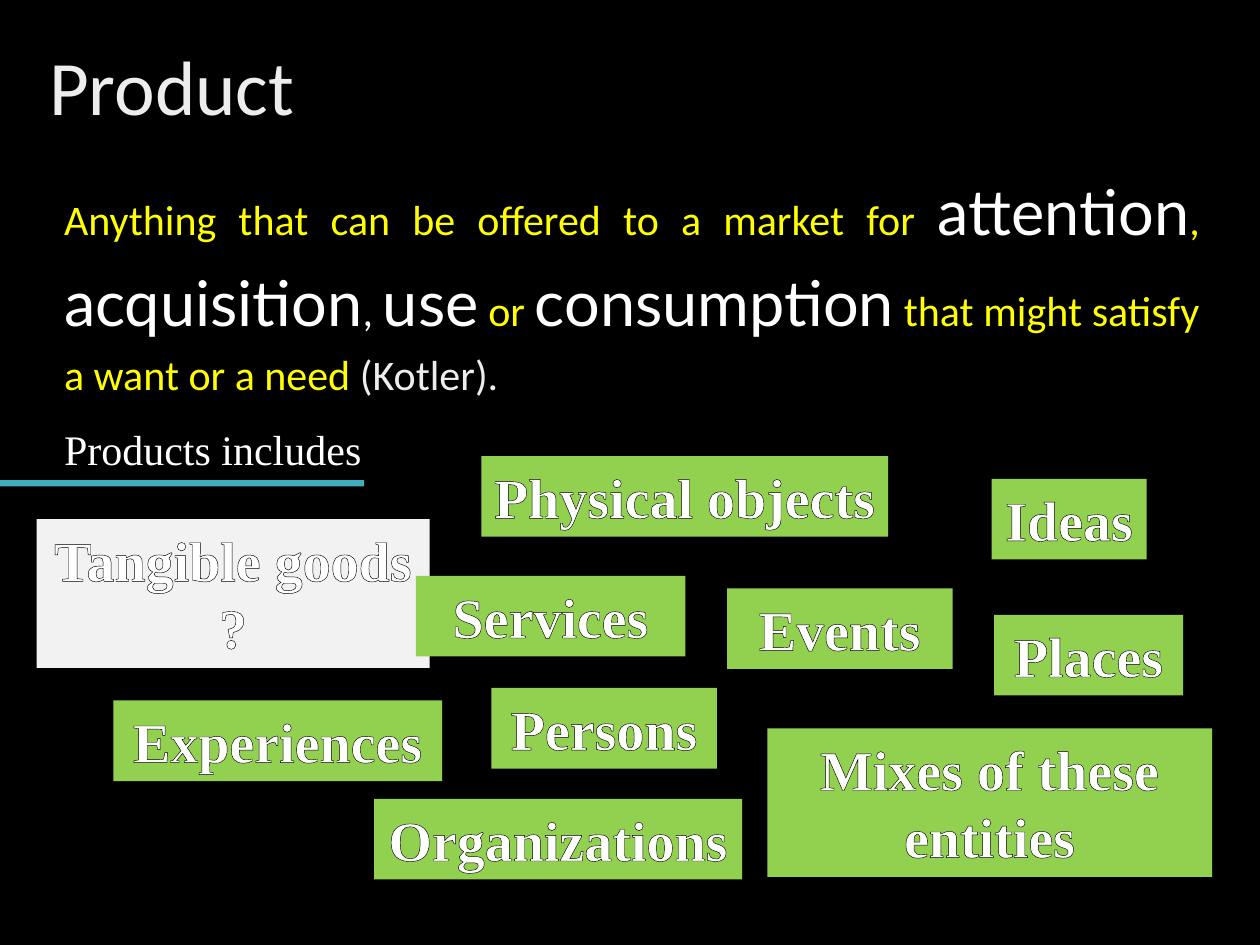
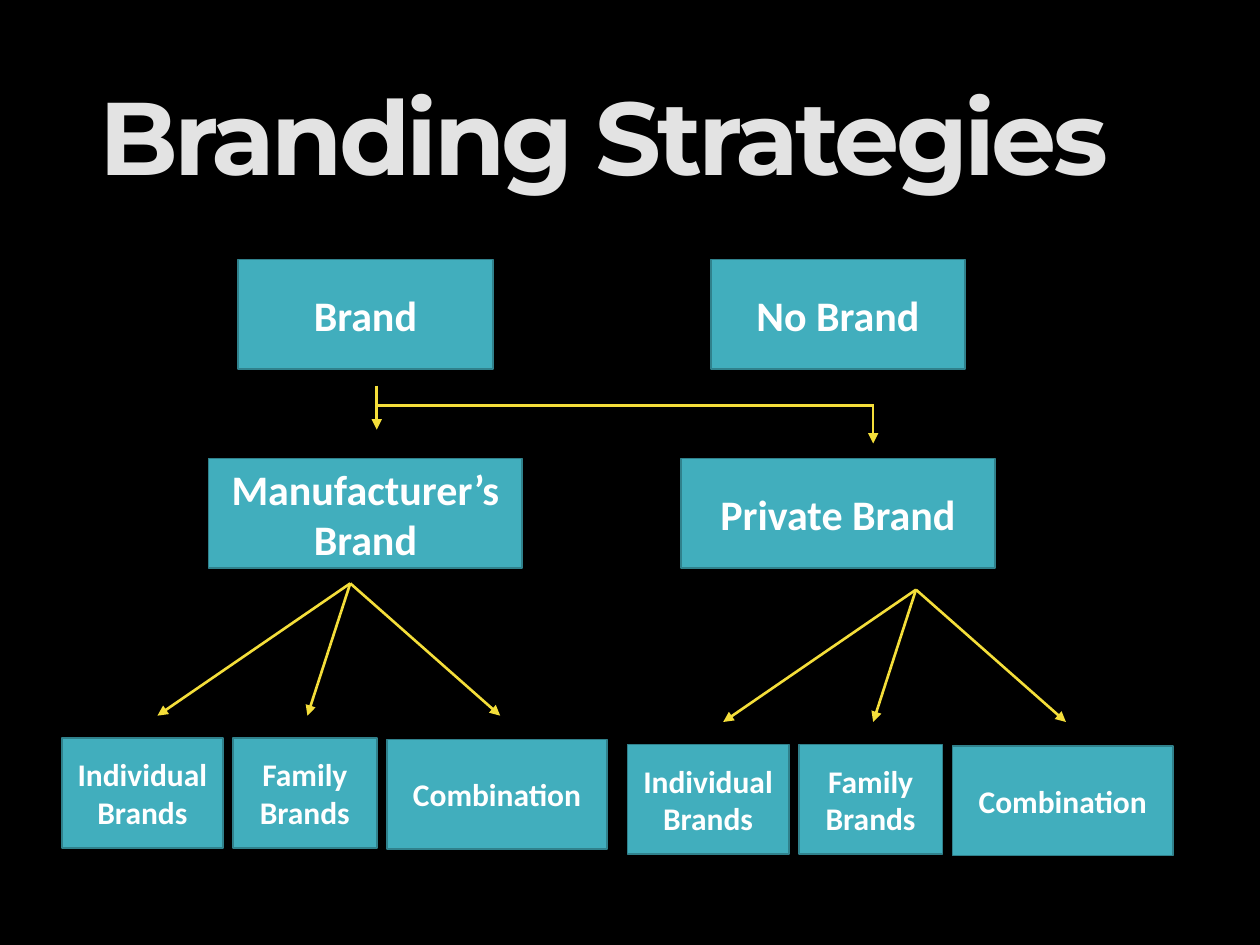
from dataclasses import dataclass

import lxml.etree
import pptx
import pptx.dml.color
import pptx.enum.shapes
import pptx.enum.text
import pptx.oxml.ns
import pptx.util

Inches = pptx.util.Inches
Pt = pptx.util.Pt
ALIGN = pptx.enum.text.PP_ALIGN
ANCHOR = pptx.enum.text.MSO_ANCHOR
AUTO_SIZE = pptx.enum.text.MSO_AUTO_SIZE
TITLE_ONLY = 5


@dataclass(frozen=True)
class Theme:
    background: str = "000000"
    white: str = "FFFFFF"
    silver: str = "EDEDED"
    title_gray: str = "E3E3E3"
    yellow: str = "FFFF00"
    teal: str = "41AEBD"
    teal_edge: str = "30818C"
    green: str = "92D050"
    pale: str = "F2F2F2"
    arrow: str = "F4DE3A"
    sans: str = "Calibri"
    accent_sans: str = "Lato"
    display: str = "Montserrat"
    serif: str = "Times New Roman"
    title_size: int = 44
    display_size: int = 59
    emphasis_size: int = 36
    tag_size: int = 32
    body_size: int = 24
    small_size: int = 18


THEME = Theme()


def rgb(value):
    return pptx.dml.color.RGBColor.from_string(value)


def add_element(parent, tag, **attributes):
    return lxml.etree.SubElement(parent, pptx.oxml.ns.qn(tag), **attributes)


class Deck:
    """Holds the theme and the slide being built."""

    def __init__(self, theme):
        self.theme = theme
        self.presentation = pptx.Presentation()
        self.presentation.slide_width = Inches(10)
        self.presentation.slide_height = Inches(7.5)
        fill = self.presentation.slide_master.background.fill
        fill.solid()
        fill.fore_color.rgb = rgb(theme.background)
        self.slide = None

    def add_run(self, paragraph, text, color, **formats):
        run = paragraph.add_run()
        run.text = text
        run.font.color.rgb = rgb(color)
        for name, value in formats.items():
            setattr(run.font, name, value)
        return run

    def format_frame(self, shape, **formats):
        for name, value in formats.items():
            setattr(shape.text_frame, name, value)
        return shape.text_frame.paragraphs[0]

    def start_slide(self, title, box, color, letter_spacing=0, **formats):
        layout = self.presentation.slide_layouts[TITLE_ONLY]
        self.slide = self.presentation.slides.add_slide(layout)
        placeholder = self.slide.shapes.title
        for name, value in zip(("left", "top", "width", "height"), box):
            setattr(placeholder, name, Inches(value))
        paragraph = self.format_frame(
            placeholder, auto_size=AUTO_SIZE.NONE,
            vertical_anchor=ANCHOR.MIDDLE, word_wrap=True)
        paragraph.alignment = ALIGN.LEFT
        paragraph.line_spacing = 0.9
        run = self.add_run(paragraph, title, color, **formats)
        if letter_spacing:
            properties = run._r.get_or_add_rPr()
            properties.set("spc", str(round(letter_spacing * 100)))

    def text_box(self, box, **formats):
        shape = self.slide.shapes.add_textbox(*map(Inches, box))
        return self.format_frame(shape, **formats)

    def rectangle(self, box, fill, edge=None):
        shape = self.slide.shapes.add_shape(
            pptx.enum.shapes.MSO_SHAPE.RECTANGLE, *map(Inches, box))
        shape.shadow.inherit = False
        shape.fill.solid()
        shape.fill.fore_color.rgb = rgb(fill)
        if edge:
            shape.line.color.rgb = rgb(edge)
            shape.line.width = Pt(1)
        else:
            shape.line.fill.background()
        return shape

    def tag(self, text, box, fill):
        """Flat label with large outlined letters."""
        shape = self.rectangle(box, fill)
        paragraph = self.format_frame(
            shape, word_wrap=True, vertical_anchor=ANCHOR.TOP,
            auto_size=AUTO_SIZE.SHAPE_TO_FIT_TEXT)
        paragraph.alignment = ALIGN.CENTER
        run = self.add_run(
            paragraph, text, self.theme.white, name=self.theme.serif,
            size=Pt(self.theme.tag_size), bold=True)
        properties = run._r.get_or_add_rPr()
        outline = add_element(properties, "a:ln", w=str(Pt(0.75)))
        solid = add_element(outline, "a:solidFill")
        add_element(solid, "a:srgbClr", val=self.theme.background)
        properties.insert(0, outline)

    def node(self, text, box, size):
        """Box of the strategy tree."""
        shape = self.rectangle(box, self.theme.teal, self.theme.teal_edge)
        paragraph = self.format_frame(
            shape, word_wrap=True, vertical_anchor=ANCHOR.MIDDLE)
        paragraph.alignment = ALIGN.CENTER
        self.add_run(paragraph, text, self.theme.white,
                     name=self.theme.sans, size=Pt(size), bold=True)

    def line(self, start, end, arrow=True):
        connector = self.slide.shapes.add_connector(
            pptx.enum.shapes.MSO_CONNECTOR.STRAIGHT,
            *map(Inches, (*start, *end)))
        connector.line.color.rgb = rgb(self.theme.arrow)
        connector.line.width = Pt(1.5)
        if arrow:
            add_element(connector.line._get_or_add_ln(), "a:tailEnd",
                        type="triangle")
        add_element(connector._element.spPr, "a:effectLst")


def build_product(deck):
    theme = deck.theme
    deck.start_slide("Product", (0.29, 0.24, 8.62, 0.95), theme.silver,
                     name=theme.sans, size=Pt(theme.title_size))

    plain = {"name": theme.sans, "size": Pt(theme.body_size)}
    emphasis = {"name": theme.accent_sans, "size": Pt(theme.emphasis_size)}
    definition = deck.text_box((0.41, 1.2, 9.21, 2.11), word_wrap=True)
    definition.alignment = ALIGN.JUSTIFY
    definition.line_spacing = 1.2
    for text, color, formats in (
            ("Anything that can be offered to a market for ",
             theme.yellow, plain),
            ("attention", theme.white, emphasis),
            (", ", theme.yellow, plain),
            ("acquisition", theme.white, emphasis),
            (", ", theme.white, plain),
            ("use", theme.white, emphasis),
            (" ", theme.white, plain),
            ("or ", theme.yellow, plain),
            ("consumption", theme.white, emphasis),
            (" that might satisfy a want or a need ", theme.yellow, plain),
            ("(Kotler).", theme.silver, plain)):
        deck.add_run(definition, text, color, **formats)

    heading = deck.text_box((0.41, 3.31, 2.58, 0.5), word_wrap=False,
                            auto_size=AUTO_SIZE.SHAPE_TO_FIT_TEXT)
    deck.add_run(heading, "Products includes", theme.white,
                 name=theme.serif, size=Pt(theme.body_size))
    deck.rectangle((0, 3.81, 2.89, 0.05), theme.teal)

    one_line, two_lines = 0.64, 1.18
    deck.tag("Tangible goods ?", (0.29, 4.12, 3.12, two_lines), theme.pale)
    for text, left, top, width, height in (
            ("Physical objects", 3.82, 3.62, 3.23, one_line),
            ("Services", 3.3, 4.57, 2.14, one_line),
            ("Persons", 3.9, 5.46, 1.79, one_line),
            ("Places", 7.89, 4.88, 1.5, one_line),
            ("Organizations", 2.97, 6.34, 2.92, one_line),
            ("Ideas", 7.87, 3.8, 1.23, one_line),
            ("Mixes of these entities", 6.09, 5.78, 3.53, two_lines),
            ("Events", 5.77, 4.67, 1.79, one_line),
            ("Experiences", 0.9, 5.56, 2.61, one_line)):
        deck.tag(text, (left, top, width, height), theme.green)


def add_brand_options(deck, left, top, node_height):
    """Three options fanned out from one point above them."""
    apex = (left + 2.29, top - 1.23)
    for text, offset, drop, width, tip in (
            ("Individual Brands", 0, 0, 1.28, 0.76),
            ("Family Brands", 1.36, 0, 1.14, 1.95),
            ("Combination", 2.58, 0.01, 1.75, 3.48)):
        deck.node(text, (left + offset, top + drop, width, node_height),
                  deck.theme.small_size)
        deck.line(apex, (left + tip, top - 0.18))


def build_branding(deck):
    theme = deck.theme
    deck.start_slide("Branding Strategies", (0.69, 0.4, 8.62, 1.45),
                     theme.title_gray, letter_spacing=-2.2,
                     name=theme.display, size=Pt(theme.display_size),
                     bold=True)

    node_height = 0.87
    column_centers = (2.9, 6.65)
    for labels, top, width in (
            (("Brand", "No Brand"), 2.06, 2.02),
            (("Manufacturer’s Brand", "Private Brand"), 3.64, 2.49)):
        for text, center in zip(labels, column_centers):
            deck.node(text, (center - width / 2, top, width, node_height),
                      theme.body_size)

    for left, top in ((0.49, 5.86), (4.98, 5.91)):
        add_brand_options(deck, left, top, node_height)

    trunk, branch, level = 2.99, 6.93, 3.22
    deck.line((trunk, 3.06), (trunk, 3.41))
    deck.line((trunk, level), (branch, level), arrow=False)
    deck.line((branch, 3.21), (branch, 3.52))


def main():
    deck = Deck(THEME)
    build_product(deck)
    build_branding(deck)
    deck.presentation.save("out.pptx")


if __name__ == "__main__":
    main()
